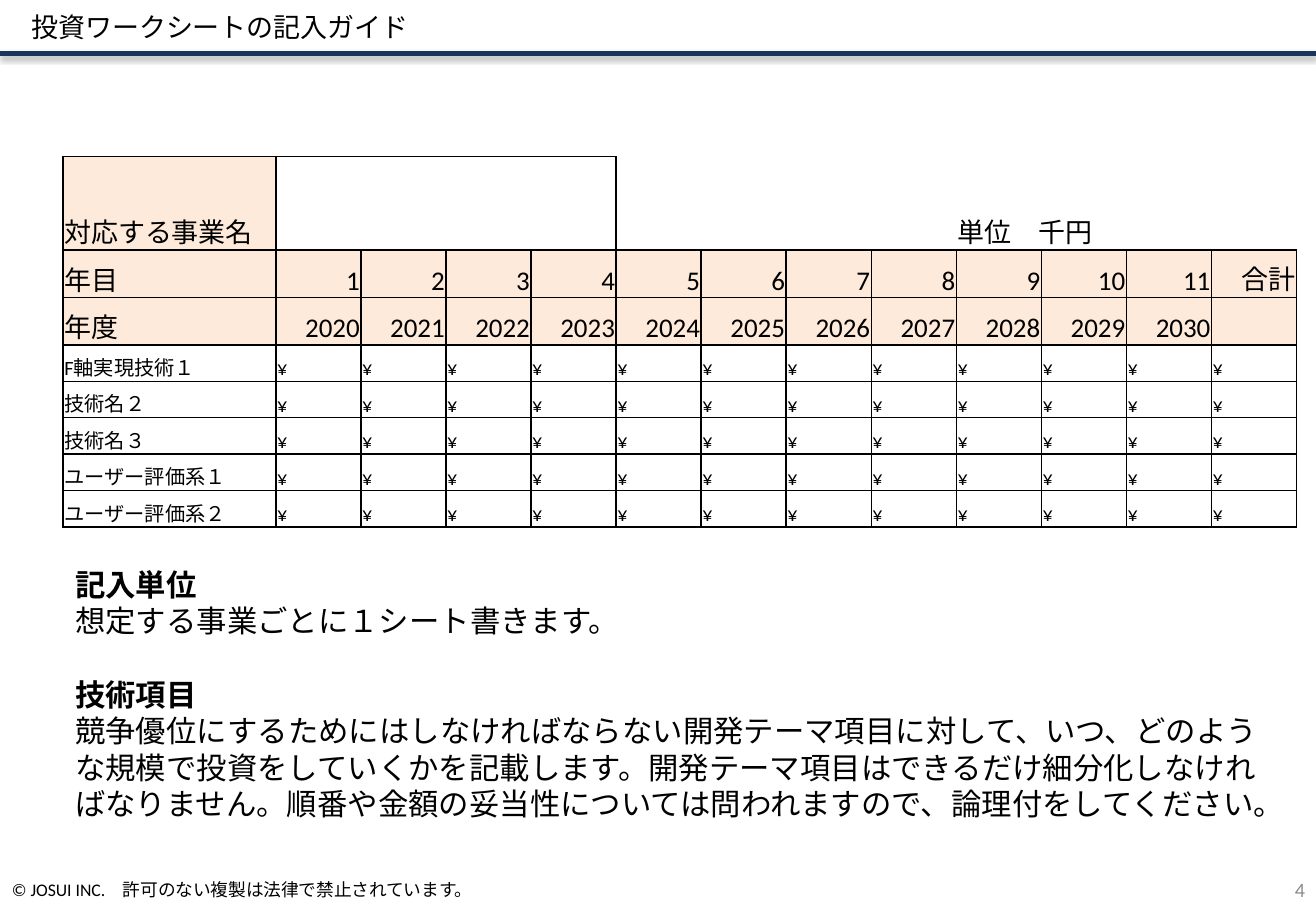
from dataclasses import dataclass
from lxml.etree import SubElement
from pptx import Presentation
from pptx.dml.color import RGBColor
from pptx.enum.lang import MSO_LANGUAGE_ID
from pptx.enum.shapes import MSO_CONNECTOR
from pptx.enum.text import MSO_ANCHOR, MSO_AUTO_SIZE, PP_ALIGN
from pptx.oxml.ns import qn
from pptx.util import Inches, Pt


@dataclass(frozen=True)
class Theme:
    ink: str = "000000"
    navy: str = "17375E"
    peach: str = "FDEADA"
    grey: str = "8C8C8C"
    latin: str = "Calibri"
    japanese: str = "Noto Sans CJK JP"
    body: float = 18
    head: float = 16
    small: float = 12
    legal: float = 10.5


THEME = Theme()


def write(p, text, size, color=THEME.ink, asian=THEME.latin, bold=False,
          align=PP_ALIGN.LEFT, before=0):
    """Put one formatted run into paragraph p."""
    p.alignment = align
    p.space_before = Pt(before)
    r = p.add_run()
    r.text = text
    f = r.font
    f.size, f.bold, f.name = Pt(size), bold, THEME.latin
    f.language_id = MSO_LANGUAGE_ID.JAPANESE
    f.color.rgb = RGBColor.from_string(color)
    SubElement(r._r.get_or_add_rPr(), qn("a:ea"), typeface=asian)


def set_borders(cell, sides):
    """Draw the named sides of a cell and clear the others."""
    tcPr = cell._tc.get_or_add_tcPr()
    for side in "LRTB":
        ln = SubElement(tcPr, qn(f"a:ln{side}"), w=str(Pt(1)))
        if side in sides:
            fill = SubElement(ln, qn("a:solidFill"))
            SubElement(fill, qn("a:srgbClr"), val=THEME.ink)
        else:
            SubElement(ln, qn("a:noFill"))


class Deck:
    def __init__(self, width, height, theme):
        self.theme = theme
        self.prs = Presentation()
        self.prs.slide_width, self.prs.slide_height = Inches(width), Inches(height)
        self.s = self.prs.slides.add_slide(self.prs.slide_layouts[5])

    def frame(self, sp, box, anchor):
        sp.left, sp.top, sp.width, sp.height = map(Inches, box)
        tf = sp.text_frame
        tf.word_wrap = True
        tf.auto_size = MSO_AUTO_SIZE.NONE
        tf.vertical_anchor = anchor
        return tf

    def title(self, text, box):
        tf = self.frame(self.s.shapes.title, box, MSO_ANCHOR.MIDDLE)
        write(tf.paragraphs[0], text, self.theme.head, asian=self.theme.japanese)

    def text(self, box, paragraphs, anchor=MSO_ANCHOR.TOP):
        sp = self.s.shapes.add_textbox(*map(Inches, box))
        tf = self.frame(sp, box, anchor)
        for i, (text, fmt) in enumerate(paragraphs):
            write(tf.add_paragraph() if i else tf.paragraphs[0], text, **fmt)

    def rule(self, y):
        line = self.s.shapes.add_connector(
            MSO_CONNECTOR.STRAIGHT, 0, Inches(y), self.prs.slide_width, Inches(y))
        line.line.color.rgb = RGBColor.from_string(self.theme.navy)
        line.line.width = Pt(3)
        effects = SubElement(line._element.spPr, qn("a:effectLst"))
        shadow = SubElement(effects, qn("a:outerShdw"), blurRad=str(Pt(3.1)),
                            dist=str(Pt(1.8)), dir="5400000", rotWithShape="0")
        color = SubElement(shadow, qn("a:srgbClr"), val=self.theme.ink)
        SubElement(color, qn("a:alpha"), val="35000")

    def table(self, box, widths, heights):
        shape = self.s.shapes.add_table(len(heights), len(widths), *map(Inches, box))
        table = shape.table
        table.first_row = table.horz_banding = False
        for column, width in zip(table.columns, widths):
            column.width = Inches(width)
        for row, height in zip(table.rows, heights):
            row.height = Inches(height)
        return table

    def cell(self, cell, text, sides="LRTB", fill=None, **fmt):
        cell.margin_left = cell.margin_right = cell.margin_top = Inches(0.01)
        cell.margin_bottom = 0
        cell.vertical_anchor = MSO_ANCHOR.BOTTOM
        set_borders(cell, sides)
        if fill:
            cell.fill.solid()
            cell.fill.fore_color.rgb = RGBColor.from_string(fill)
        else:
            cell.fill.background()
        if text:
            write(cell.text_frame.paragraphs[0], text, **fmt)


def main():
    t = THEME
    deck = Deck(10.83, 7.5, t)

    # Header
    deck.rule(0.44)
    deck.title("投資ワークシートの記入ガイド", (0.16, 0, 9.59, 0.44))

    # Investment worksheet
    years = range(1, 12)
    technologies = ["F軸実現技術１", "技術名２", "技術名３", "ユーザー評価系１", "ユーザー評価系２"]
    rows = [
        ["対応する事業名"] + [""] * 8 + ["単位　千円"] + [""] * 3,
        ["年目", *map(str, years), "合計"],
        ["年度", *(str(2019 + year) for year in years), ""],
        *([name] + ["¥"] * 12 for name in technologies),
    ]
    table = deck.table((0.52, 1.29, 10.15, 3.05), [1.75] + [0.7] * 12,
                       [0.77] + [0.39] * 2 + [0.3] * 5)
    for i, row in enumerate(rows):
        for j, text in enumerate(row):
            outside = i == 0 and j > 4
            heading = i in (1, 2) or (i == 0 and j == 0)
            sides = ("LB" if j == 5 else "B") if outside else "LRTB"
            noto = i > 2 or text in ("単位　千円", "合計")
            deck.cell(table.cell(i, j), text, sides,
                      fill=t.peach if heading else None,
                      size=t.head if i < 3 else t.small,
                      asian=t.japanese if noto else t.latin,
                      align=PP_ALIGN.RIGHT if i in (1, 2) and j else PP_ALIGN.LEFT)
    for first, last in ((1, 4), (9, 10)):
        table.cell(0, first).merge(table.cell(0, last))

    # Filling-in notes
    plain = dict(size=t.body)
    deck.text((0.52, 4.61, 10.15, 2.22), [
        ("記入単位", dict(size=t.body, bold=True)),
        ("想定する事業ごとに１シート書きます。", plain),
        ("技術項目", dict(size=t.body, bold=True, before=22)),
        ("競争優位にするためにはしなければならない開発テーマ項目に対して、いつ、どのような規模で"
         "投資をしていくかを記載します。開発テーマ項目はできるだけ細分化しなければなりません。"
         "順番や金額の妥当性については問われますので、論理付をしてください。", plain),
    ])

    # Footer
    deck.text((0, 7.15, 10.49, 0.35),
              [("© JOSUI INC.　許可のない複製は法律で禁止されています。",
                dict(size=t.legal, asian=t.japanese))], MSO_ANCHOR.MIDDLE)
    deck.text((8.31, 7.15, 2.53, 0.35),
              [("4", dict(size=t.small, color=t.grey, align=PP_ALIGN.RIGHT))],
              MSO_ANCHOR.MIDDLE)

    deck.prs.save("out.pptx")


if __name__ == "__main__":
    main()
